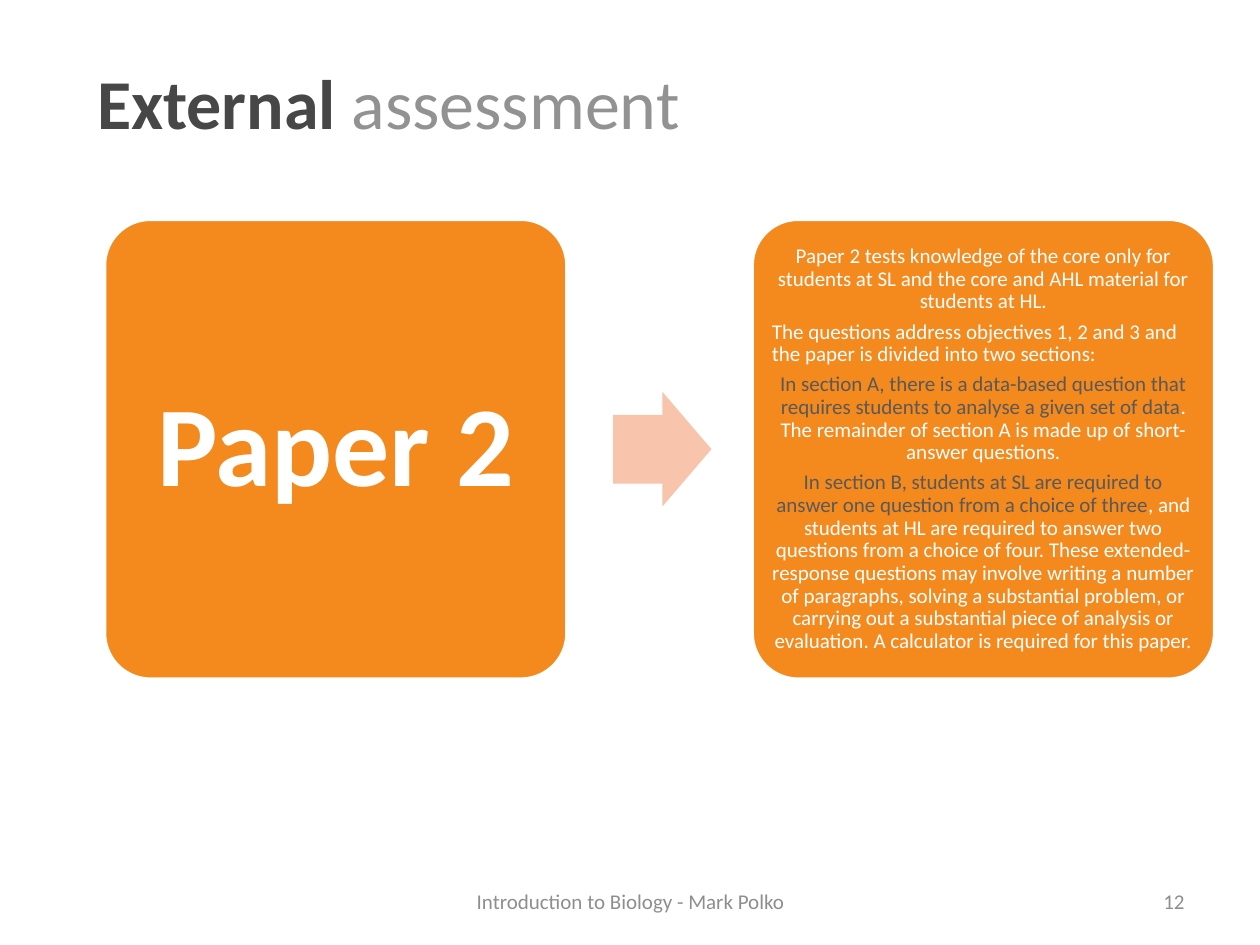
from pptx import Presentation
from pptx import util as u
from pptx.dml.color import RGBColor
from pptx.enum import shapes, text

FONT = "Calibri"
COLORS = {
    "orange": "F4891E",
    "peach": "F8C4AC",
    "white": "FFFFFF",
    "dark": "474747",
    "light": "929292",
    "gray": "595959",
    "footer": "8E8E8E",
}
LEFT, CENTER, RIGHT = text.PP_ALIGN.LEFT, text.PP_ALIGN.CENTER, text.PP_ALIGN.RIGHT

# Each paragraph: alignment, then runs of (words, colour)
DETAILS = [
    (CENTER, [("Paper 2 tests knowledge of the core only for students at SL and the core "
               "and AHL material for students at HL.", "white")]),
    (LEFT, [("The questions address objectives 1, 2 and 3 and the paper is divided into "
             "two sections:", "white")]),
    (CENTER, [("In section A, there is a data-based question that requires students to "
               "analyse a given set of data", "gray"),
              (". The remainder of section A is made up of short-answer questions.", "white")]),
    (CENTER, [("In section B, students at SL are required to answer one question from a "
               "choice of three", "gray"),
              (", and students at HL are required to answer two questions from a choice of "
               "four. These extended-response questions may involve writing a number of "
               "paragraphs, solving a substantial problem, or carrying out a substantial "
               "piece of analysis or evaluation. A calculator is required for this paper.",
               "white")]),
]


def color(name):
    return RGBColor.from_string(COLORS[name])


def add_span(para, words, size, tint, bold=False):
    span = para.add_run()
    span.text = words
    span.font.name = FONT
    span.font.size = u.Pt(size)
    span.font.bold = bold
    span.font.color.rgb = color(tint)


def add_title(page, left, top, width, height):
    title = page.shapes.title
    title.left, title.top, title.width, title.height = map(u.Inches, (left, top, width, height))
    frame = title.text_frame
    frame.auto_size = text.MSO_AUTO_SIZE.NONE
    frame.vertical_anchor = text.MSO_ANCHOR.TOP
    para = frame.paragraphs[0]
    para.alignment = LEFT
    add_span(para, "External ", 40, "dark", bold=True)
    add_span(para, "assessment", 40, "light")


def add_card(group, left, top, width, height, paragraphs, size, inset, bold=False):
    card = group.shapes.add_shape(shapes.MSO_SHAPE.ROUNDED_RECTANGLE,
                                  *map(u.Inches, (left, top, width, height)))
    card.adjustments[0] = 0.1
    card.shadow.inherit = False
    card.fill.solid()
    card.fill.fore_color.rgb = color("orange")
    card.line.color.rgb = color("white")
    card.line.width = u.Pt(2)
    frame = card.text_frame
    frame.word_wrap = True
    frame.vertical_anchor = text.MSO_ANCHOR.MIDDLE
    frame.margin_left = frame.margin_right = u.Inches(inset)
    frame.margin_top = frame.margin_bottom = u.Inches(inset)
    for index, (alignment, spans) in enumerate(paragraphs):
        para = frame.add_paragraph() if index else frame.paragraphs[0]
        para.alignment = alignment
        para.line_spacing = 0.9
        para.space_after = u.Pt(0.35 * size)
        for words, tint in spans:
            add_span(para, words, size, tint, bold)


def add_process(page, left, top, width, height):
    """Two cards at the ends of the box, with an arrow between them."""
    group = page.shapes.add_group_shape()
    card_width = 3.67
    add_card(group, left, top, card_width, height,
             [(CENTER, [("Paper 2", "white")])], 65, 0.27, bold=True)

    arrow_width, arrow_height = 0.78, 0.91
    arrow = group.shapes.add_shape(
        shapes.MSO_SHAPE.RIGHT_ARROW,
        u.Inches(left + 1.1 * card_width), u.Inches(top + (height - arrow_height) / 2),
        u.Inches(arrow_width), u.Inches(arrow_height))
    arrow.adjustments[0] = 0.6
    arrow.adjustments[1] = 0.5
    arrow.shadow.inherit = False
    arrow.fill.solid()
    arrow.fill.fore_color.rgb = color("peach")
    arrow.line.fill.background()

    add_card(group, left + width - card_width, top, card_width, height, DETAILS, 12, 0.05)


def add_footer(page, left, top, width, height, words, alignment):
    box = page.shapes.add_textbox(*map(u.Inches, (left, top, width, height)))
    frame = box.text_frame
    frame.word_wrap = True
    frame.vertical_anchor = text.MSO_ANCHOR.MIDDLE
    para = frame.paragraphs[0]
    para.alignment = alignment
    add_span(para, words, 12, "footer")


def main():
    deck = Presentation()
    deck.slide_width, deck.slide_height = u.Inches(10), u.Inches(7.5)
    page = deck.slides.add_slide(deck.slide_layouts[5])

    # Heading
    add_title(page, 0.67, 0.42, 8.67, 0.77)
    # Paper and its description
    add_process(page, 0.83, 1.74, 8.81, 3.65)
    # Footer and page number
    add_footer(page, 3.42, 6.95, 3.17, 0.4, "Introduction to Biology - Mark Polko", CENTER)
    add_footer(page, 7.17, 6.95, 2.33, 0.4, "12", RIGHT)

    deck.save("out.pptx")


if __name__ == "__main__":
    main()
